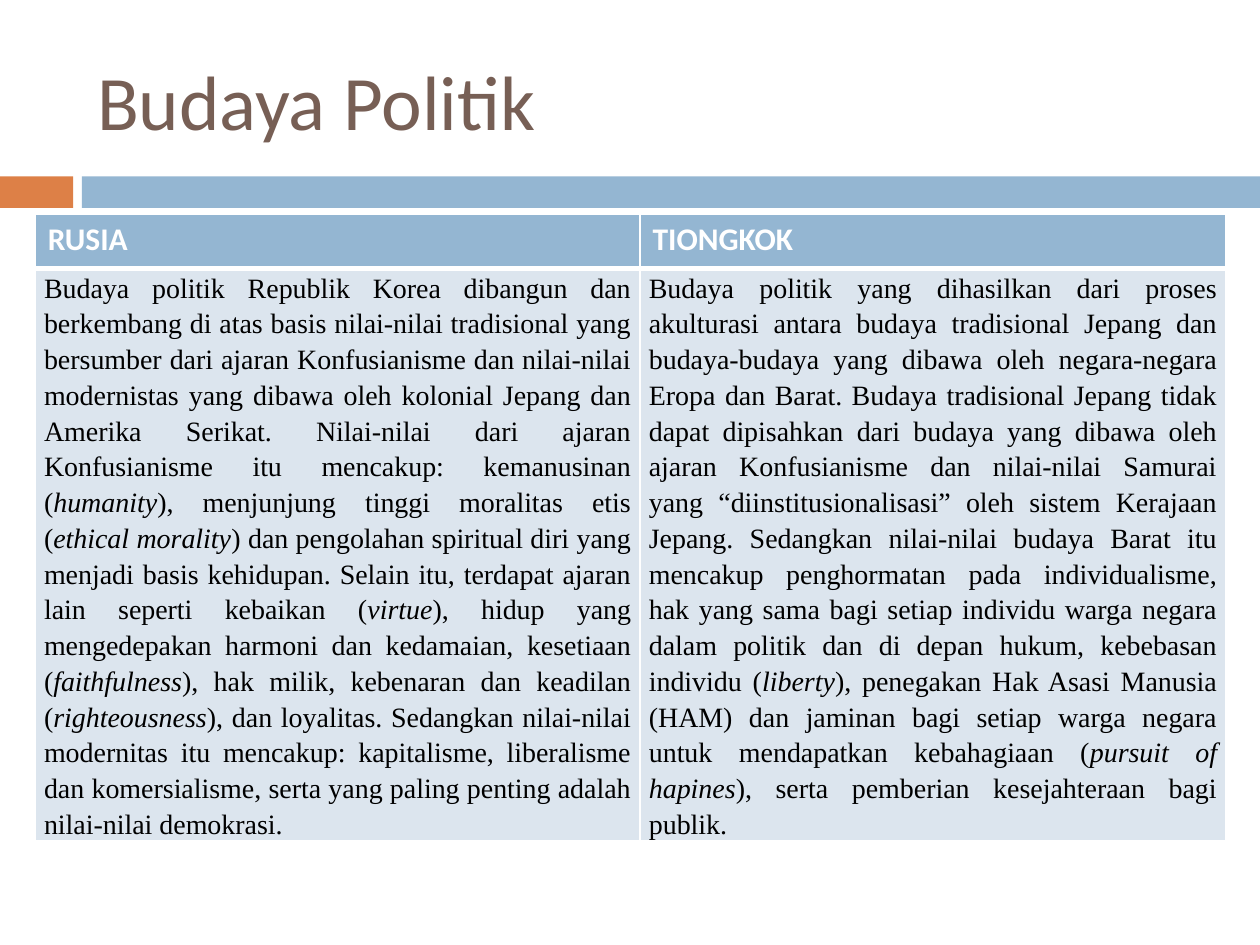
from lxml.etree import SubElement
from pptx import Presentation
from pptx.dml.color import RGBColor
from pptx.enum.shapes import MSO_SHAPE
from pptx.enum.text import MSO_ANCHOR, PP_ALIGN
from pptx.oxml.ns import qn
from pptx.util import Inches, Pt

COLORS = {
    "orange": "DD8047",
    "blue": "94B6D2",
    "pale": "DCE5EE",
    "brown": "775F55",
    "white": "FFFFFF",
    "black": "000000",
}

# Asterisks enclose the words set in italics
COLUMNS = [
    (
        "RUSIA", 4.8,
        "Budaya politik Republik Korea dibangun dan berkembang di atas basis "
        "nilai-nilai tradisional yang bersumber dari ajaran Konfusianisme dan "
        "nilai-nilai modernistas yang dibawa oleh kolonial Jepang dan Amerika "
        "Serikat. Nilai-nilai dari ajaran Konfusianisme itu mencakup: "
        "kemanusinan (*humanity*), menjunjung tinggi moralitas etis (*ethical "
        "morality*) dan pengolahan spiritual diri yang menjadi basis kehidupan. "
        "Selain itu, terdapat ajaran lain seperti kebaikan (*virtue*), hidup "
        "yang mengedepakan harmoni dan kedamaian, kesetiaan (*faithfulness*), "
        "hak milik, kebenaran dan keadilan (*righteousness*), dan loyalitas. "
        "Sedangkan nilai-nilai modernitas itu mencakup: kapitalisme, "
        "liberalisme dan komersialisme, serta yang paling penting adalah "
        "nilai-nilai demokrasi.",
    ),
    (
        "TIONGKOK", 4.65,
        "Budaya politik yang dihasilkan dari proses akulturasi antara budaya "
        "tradisional Jepang dan budaya-budaya yang dibawa oleh negara-negara "
        "Eropa dan Barat. Budaya tradisional Jepang tidak dapat dipisahkan dari "
        "budaya yang dibawa oleh ajaran Konfusianisme dan nilai-nilai Samurai "
        "yang “diinstitusionalisasi” oleh sistem Kerajaan Jepang. Sedangkan "
        "nilai-nilai budaya Barat itu mencakup penghormatan pada "
        "individualisme, hak yang sama bagi setiap individu warga negara dalam "
        "politik dan di depan hukum, kebebasan individu (*liberty*), penegakan "
        "Hak Asasi Manusia (HAM) dan jaminan bagi setiap warga negara untuk "
        "mendapatkan kebahagiaan (*pursuit of hapines*), serta pemberian "
        "kesejahteraan bagi publik.",
    ),
]


def add_run(para, text, font, size, color):
    run = para.add_run()
    run.text = text
    run.font.name = font
    run.font.size = Pt(size)
    run.font.color.rgb = RGBColor.from_string(COLORS[color])
    return run


def style_cell(cell, fill, top, bottom):
    """Fill a cell and give it white borders of the given point widths."""
    cell.fill.solid()
    cell.fill.fore_color.rgb = RGBColor.from_string(COLORS[fill])
    properties = cell._tc.get_or_add_tcPr()
    borders = [("a:lnL", 1), ("a:lnR", 1), ("a:lnT", top), ("a:lnB", bottom)]
    for position, (tag, width) in enumerate(borders):
        line = SubElement(properties, qn(tag), w=str(Pt(width)))
        line_fill = SubElement(line, qn("a:solidFill"))
        SubElement(line_fill, qn("a:srgbClr"), val=COLORS["white"])
        properties.insert(position, line)


deck = Presentation()
deck.slide_width, deck.slide_height = Inches(10), Inches(7.5)
page = deck.slides.add_slide(deck.slide_layouts[5])

# Band under the title
for left, width, color in [(0, 0.58, "orange"), (0.65, 9.35, "blue")]:
    bar = page.shapes.add_shape(
        MSO_SHAPE.RECTANGLE, Inches(left), Inches(1.4), Inches(width), Inches(0.25))
    bar.shadow.inherit = False
    bar.fill.solid()
    bar.fill.fore_color.rgb = RGBColor.from_string(COLORS[color])
    bar.line.fill.background()

# Title
title = page.shapes.title
title.left, title.top = Inches(0.67), Inches(0.25)
title.width, title.height = Inches(8.92), Inches(1.08)
title.text_frame.vertical_anchor = MSO_ANCHOR.MIDDLE
title_para = title.text_frame.paragraphs[0]
title_para.alignment = PP_ALIGN.LEFT
add_run(title_para, "Budaya Politik", "Calibri", 44, "brown")

# Comparison table
table = page.shapes.add_table(
    2, len(COLUMNS), Inches(0.28), Inches(1.7), Inches(9.45), Inches(4.02)).table
table.rows[0].height = Inches(0.43)
table.rows[1].height = Inches(3.59)

for column, (heading, width, body) in enumerate(COLUMNS):
    table.columns[column].width = Inches(width)

    head_cell = table.cell(0, column)
    style_cell(head_cell, "blue", top=1, bottom=3)
    head_para = head_cell.text_frame.paragraphs[0]
    add_run(head_para, heading, "Calibri", 18, "white").font.bold = True

    body_cell = table.cell(1, column)
    style_cell(body_cell, "pale", top=3, bottom=1)
    body_cell.margin_left = body_cell.margin_right = Inches(0.07)
    body_cell.margin_top = body_cell.margin_bottom = Inches(0)
    para = body_cell.text_frame.paragraphs[0]
    para.alignment = PP_ALIGN.JUSTIFY
    para.line_spacing = 1.15
    for index, text in enumerate(body.split("*")):
        span = add_run(para, text, "Times New Roman", 16, "black")
        span.font.bold = False
        span.font.italic = index % 2 == 1

deck.save("out.pptx")
